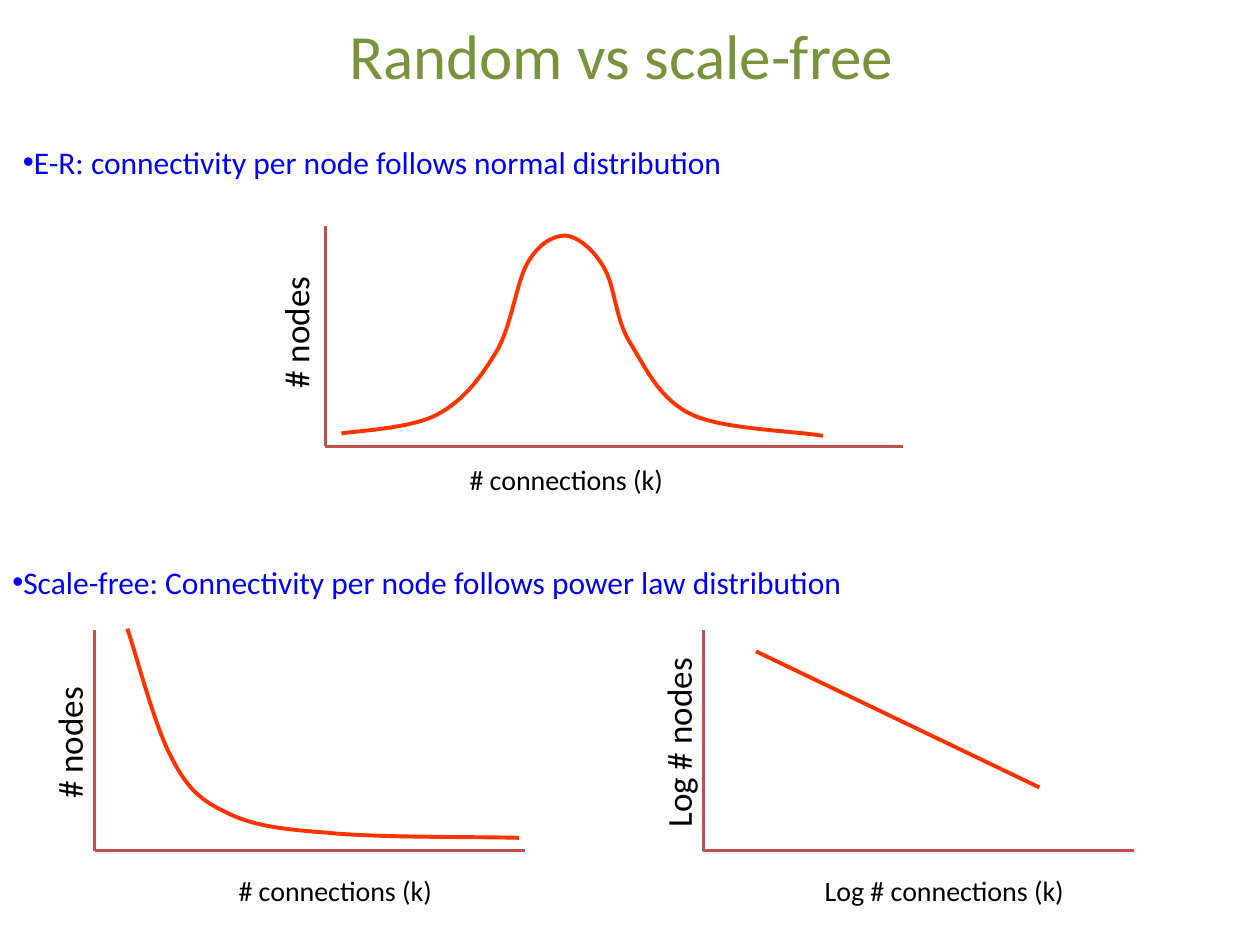
from lxml.etree import SubElement
from pptx import Presentation
from pptx.dml.color import RGBColor
from pptx.enum.shapes import MSO_CONNECTOR as Connector
from pptx.enum.text import PP_ALIGN as Align
from pptx.oxml.ns import qn
from pptx.util import Pt

TITLE_GREEN = RGBColor(0x77, 0x93, 0x3C)
TEXT_BLUE = RGBColor(0x00, 0x00, 0xFF)
AXIS_RED = RGBColor(0xC0, 0x50, 0x4D)
CURVE_ORANGE = RGBColor(0xFF, 0x33, 0x00)
BLACK = RGBColor(0, 0, 0)

# Curves in points from the plot corner: a start, then two controls and an end per piece
BELL_CURVE = [
    (9.1, 118.7),
    (18.5, 117.2), (49.4, 115.8), (63.8, 107.9),
    (79, 100), (89, 86.3), (97.7, 71.9),
    (106.3, 57.5), (109.2, 31.6), (115.7, 20.8),
    (122.2, 10), (130.1, 5.6), (137.3, 5.6),
    (144.5, 6.4), (153.1, 13.6), (158.9, 23.6),
    (165.4, 33.7), (165.4, 53.2), (174, 66.8),
    (182.6, 80.5), (190.6, 99.2), (209.3, 107.9),
    (227.3, 116.5), (268.3, 117.2), (284.2, 120.1),
]
POWER_CURVE = [
    (18.7, -0.7),
    (23, 10.8), (33.8, 53.3), (43.2, 71.3),
    (51.8, 88.6), (59, 96.5), (74.2, 103.7),
    (89.3, 111.6), (105.1, 113.8), (133.2, 115.9),
    (161.3, 118.8), (220.3, 118.1), (242.6, 118.8),
]
LOG_LINE = [(30, 12.2), (192, 90)]


def add_text(shapes, text, box, size, color=BLACK, align=Align.CENTER,
             wrap=False, bullet=False, rotation=0):
    shape = shapes.add_textbox(*map(Pt, box))
    shape.rotation = rotation
    shape.text_frame.word_wrap = wrap
    paragraph = shape.text_frame.paragraphs[0]
    paragraph.alignment = align
    if bullet:
        properties = paragraph._p.get_or_add_pPr()
        SubElement(properties, qn("a:buFont"), typeface="Arial")
        SubElement(properties, qn("a:buChar"), char="•")
    run = paragraph.add_run()
    run.text = text
    run.font.name = "Calibri"
    run.font.size = Pt(size)
    run.font.color.rgb = color


def add_line(shapes, start, end, color, width):
    line = shapes.add_connector(Connector.STRAIGHT, *map(Pt, (*start, *end)))
    line.line.color.rgb = color
    line.line.width = Pt(width)
    SubElement(line._element.spPr, qn("a:effectLst"))


def add_curve(shapes, points, color, width):
    """Draw a smooth open curve through every third point."""
    points = [(Pt(x), Pt(y)) for x, y in points]
    builder = shapes.build_freeform(*points[0])
    builder.add_line_segments(points[3::3], close=False)
    curve = builder.convert_to_shape()
    curve.fill.background()
    curve.line.color.rgb = color
    curve.line.width = Pt(width)
    curve.shadow.inherit = False

    # Turn the straight pieces into Bezier pieces
    outline = next(curve._element.iter(qn("a:path")))
    for segment in outline.findall(qn("a:lnTo")):
        outline.remove(segment)
    for first in range(1, len(points), 3):
        segment = SubElement(outline, qn("a:cubicBezTo"))
        for x, y in points[first:first + 3]:
            SubElement(segment, qn("a:pt"), x=str(x - curve.left), y=str(y - curve.top))


def add_plot(slide, box, points, x_label, y_label, axis_width=2.25,
             x_label_gap=9.4, y_label_center=(-14.2, 64.5), label_widths=(127, 79)):
    left, top, width, height = box
    bottom = top + height
    shapes = slide.shapes.add_group_shape().shapes

    # Axes
    add_line(shapes, (left, top), (left, bottom), AXIS_RED, axis_width)
    add_line(shapes, (left, bottom), (left + width, bottom), AXIS_RED, axis_width)

    # Distribution
    placed = [(left + x, top + y) for x, y in points]
    if len(placed) == 2:
        add_line(shapes, *placed, CURVE_ORANGE, 2.25)
    else:
        add_curve(shapes, placed, CURVE_ORANGE, 2.25)

    # Axis labels
    x_width, y_width = label_widths
    center_x, center_y = y_label_center
    add_text(shapes, y_label,
             (left + center_x - y_width / 2, top + center_y - 16, y_width, 32),
             20, rotation=270)
    add_text(shapes, x_label,
             (left + 137.6 - x_width / 2, bottom + x_label_gap, x_width, 26.6), 16)


def add_heading(slide, text, box):
    add_text(slide.shapes, text, box, 18, TEXT_BLUE, Align.LEFT, wrap=True, bullet=True)


def main():
    presentation = Presentation()
    presentation.slide_width, presentation.slide_height = Pt(720), Pt(540)
    slide = presentation.slides.add_slide(presentation.slide_layouts[6])

    # Title
    add_text(slide.shapes, "Random vs scale-free", (190, 5.8, 330, 51), 36, TITLE_GREEN)

    # Random network
    add_heading(slide, "E-R: connectivity per node follows normal distribution",
                (6, 78, 654, 36))
    add_plot(slide, (186, 129, 330, 126), BELL_CURVE, "# connections (k)", "# nodes",
             axis_width=1.5, x_label_gap=5.7, y_label_center=(-16.8, 61))

    # Scale-free network, on linear and log scales
    add_heading(slide, "Scale-free: Connectivity per node follows power law distribution",
                (0, 318, 714, 36))
    add_plot(slide, (54, 360, 246, 126), POWER_CURVE, "# connections (k)", "# nodes")
    add_plot(slide, (402, 360, 246, 126), LOG_LINE, "Log # connections (k)",
             "Log # nodes", label_widths=(153, 112))

    presentation.save("out.pptx")


if __name__ == "__main__":
    main()
